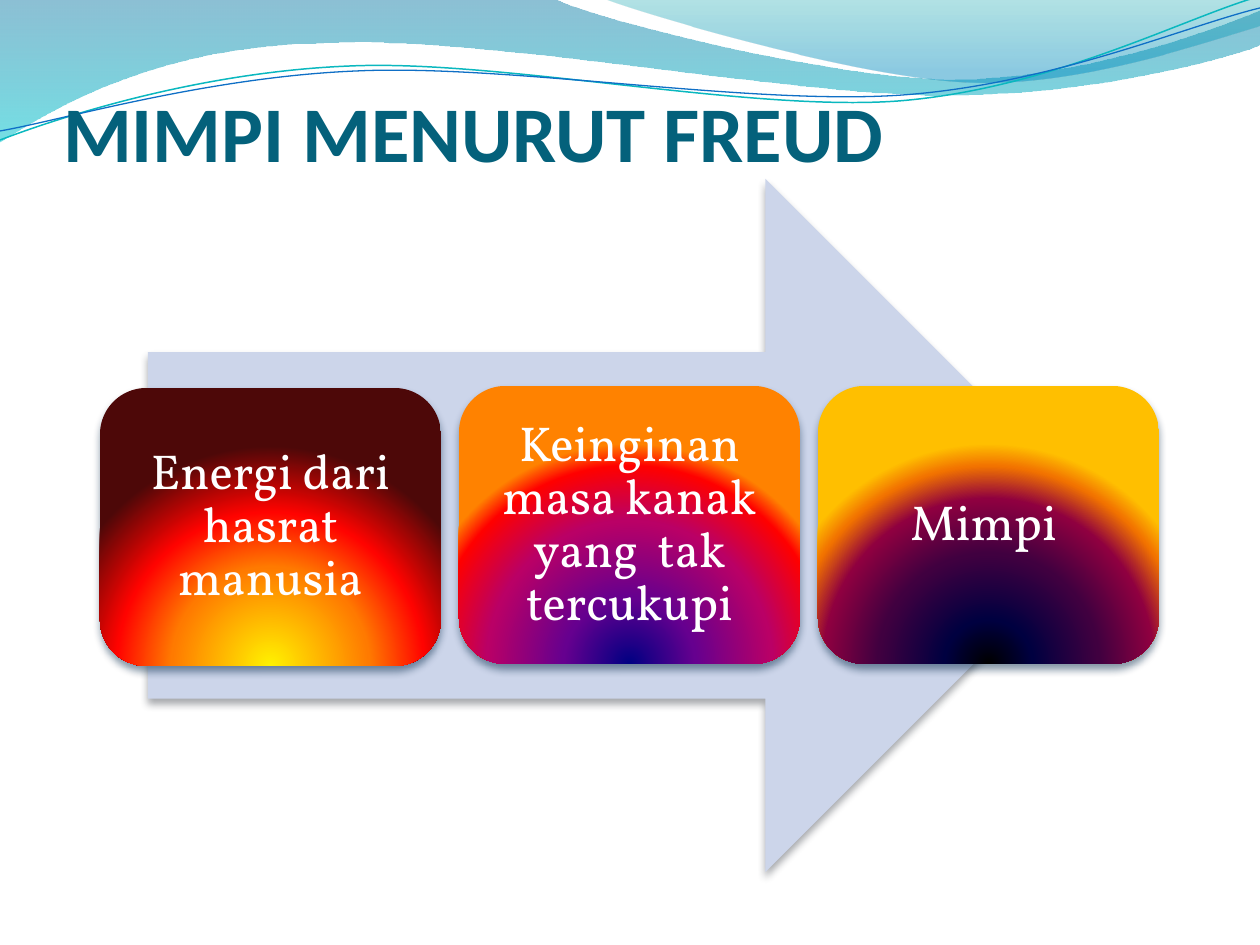
"""Build the slide on dreams according to Freud."""
from lxml.etree import SubElement
from pptx import Presentation
from pptx.dml.color import RGBColor
from pptx.enum.shapes import MSO_SHAPE
from pptx.enum.text import MSO_ANCHOR, PP_ALIGN
from pptx.oxml.ns import qn
from pptx.util import Pt

PX = 914400 / 126
TITLE = "MIMPI MENURUT FREUD"
STEPS = [
    ("Energi dari hasrat manusia", 388,
     [(0, "FFF200"), (45, "FF7A00"), (70, "FF0300"), (100, "4D0808")]),
    ("Keinginan masa kanak yang  tak tercukupi", 386,
     [(0, "000082"), (30, "66008F"), (65, "BA0066"), (90, "FF0000"), (100, "FF8200")]),
    ("Mimpi ", 386,
     [(0, "000000"), (20, "000040"), (50, "400040"), (75, "8F0040"), (90, "F27300"),
      (100, "FFBF00")]),
]
STEP_LEFT, STEP_PITCH, STEP_WIDTH, STEP_HEIGHT = 100, 359, 341, 278
ARROW = (148, 179, 964, 693)
WAVES = [
    ([(0, 0), (554, -1), (600, 21, 837, 79, 955, 79), (1074, 79, 1207, 33, 1260, 11),
      (1261, 45), (1238, 55, 1096, 96, 940, 95), (784, 95, 481, 35, 324, 43),
      (163, 45, 58, 105, -1, 142), (0, 0)],
     [(0, "0074A1", 45), (100, "00C6CF", 55)]),
    ([(604, -1), (641, 14, 859, 78, 969, 82), (1079, 87, 1211, 40, 1260, 26), (1260, 0),
      (604, -1)],
     [(0, "00A1A9", 30), (80, "008BBF", 45)]),
]
WAVE_LINES = [
    ([(0, 140), (60, 117, 199, 72, 349, 66), (498, 59, 747, 112, 898, 101),
      (1050, 89, 1182, 19, 1257, -3)], "0AB8BF", 0.85),
    ([(0, 131), (59, 121, 207, 77, 357, 71), (508, 64, 752, 106, 903, 95),
      (1053, 84, 1186, 26, 1260, 8)], "0F6FC6", 0.75),
]


def px(*lengths):
    return [round(length * PX) for length in lengths]


def color(value):
    return RGBColor.from_string(value)


def add_xml(parent, tag, **attributes):
    return SubElement(parent, qn(tag), {name: str(value) for name, value in attributes.items()})


def add_color(parent, value, alpha=100):
    element = add_xml(parent, "a:srgbClr", val=value)
    if alpha < 100:
        add_xml(element, "a:alpha", val=alpha * 1000)


def set_gradient(shape, stops, radial=False):
    shape.fill.background()
    properties = shape._element.spPr
    gradient = add_xml(properties, "a:gradFill", rotWithShape=1)
    stop_list = add_xml(gradient, "a:gsLst")
    for position, *stop_color in stops:
        add_color(add_xml(stop_list, "a:gs", pos=position * 1000), *stop_color)
    if radial:
        center = add_xml(gradient, "a:path", path="circle")
        add_xml(center, "a:fillToRect", l=50000, t=100000, r=50000, b=0)
    else:
        add_xml(gradient, "a:lin", ang=5400000, scaled=0)
    properties.replace(properties.find(qn("a:noFill")), gradient)


def set_shadow(shape, value):
    shape.shadow.inherit = False
    effects = shape._element.spPr.find(qn("a:effectLst"))
    shadow = add_xml(effects, "a:outerShdw", blurRad=Pt(4.5), dist=Pt(3), dir=5400000,
                     rotWithShape=0)
    add_color(shadow, value, 48)


def add_wave(slide, segments, close):
    points = [px(*segment[i:i + 2]) for segment in segments for i in range(0, len(segment), 2)]
    builder = slide.shapes.build_freeform(*points[0])
    builder.add_line_segments(points[1:], close=close)
    shape = builder.convert_to_shape()
    shape.shadow.inherit = False
    lines = iter(list(shape._element.spPr.iter(qn("a:lnTo"))))
    for segment in segments[1:]:
        first = next(lines)
        if len(segment) == 6:
            first.tag = qn("a:cubicBezTo")
            for line in (next(lines), next(lines)):
                first.append(line[0])
                line.getparent().remove(line)
    return shape


def add_text(paragraph, text, font, size, value, bold=False):
    run = paragraph.add_run()
    run.text = text
    run.font.name = font
    run.font.size = Pt(size)
    run.font.bold = bold
    run.font.color.rgb = color(value)


def set_margins(frame, left, top, right, bottom):
    frame.margin_left, frame.margin_top, frame.margin_right, frame.margin_bottom = px(
        left, top, right, bottom)
    frame.word_wrap = True


def add_background(slide):
    for segments, stops in WAVES:
        wave = add_wave(slide, segments, True)
        wave.line.fill.background()
        set_gradient(wave, stops)
    for segments, value, width in WAVE_LINES:
        wave = add_wave(slide, segments, False)
        wave.fill.background()
        wave.line.color.rgb = color(value)
        wave.line.width = Pt(width)


def add_title(slide):
    title = slide.shapes.title
    slide.shapes._spTree.append(title._element)
    title.left, title.top, title.width, title.height = px(63, 52, 1134, 126)
    frame = title.text_frame
    set_margins(frame, 0, 6, 0, 0)
    frame.vertical_anchor = MSO_ANCHOR.BOTTOM
    paragraph = frame.paragraphs[0]
    paragraph.alignment = PP_ALIGN.LEFT
    add_text(paragraph, TITLE, "Calibri", 45, "04617B", bold=True)


def add_process(slide):
    arrow = slide.shapes.add_shape(MSO_SHAPE.RIGHT_ARROW, *px(*ARROW))
    arrow.fill.solid()
    arrow.fill.fore_color.rgb = color("CCD5EA")
    arrow.line.fill.background()
    set_shadow(arrow, "474B53")
    for index, (text, top, stops) in enumerate(STEPS):
        left = STEP_LEFT + index * STEP_PITCH
        step = slide.shapes.add_shape(MSO_SHAPE.ROUNDED_RECTANGLE,
                                      *px(left, top, STEP_WIDTH, STEP_HEIGHT))
        step.line.fill.background()
        set_gradient(step, stops, radial=True)
        set_shadow(step, "042747")
        frame = step.text_frame
        set_margins(frame, 15, 15, 15, 15)
        frame.vertical_anchor = MSO_ANCHOR.MIDDLE
        paragraph = frame.paragraphs[0]
        paragraph.alignment = PP_ALIGN.CENTER
        paragraph.line_spacing = 0.9
        add_text(paragraph, text, "Vollkorn", 28, "FFFFFF")


def main():
    presentation = Presentation()
    presentation.slide_width, presentation.slide_height = px(1260, 945)
    slide = presentation.slides.add_slide(presentation.slide_layouts[5])
    add_background(slide)
    add_title(slide)
    add_process(slide)
    presentation.save("out.pptx")


if __name__ == "__main__":
    main()
